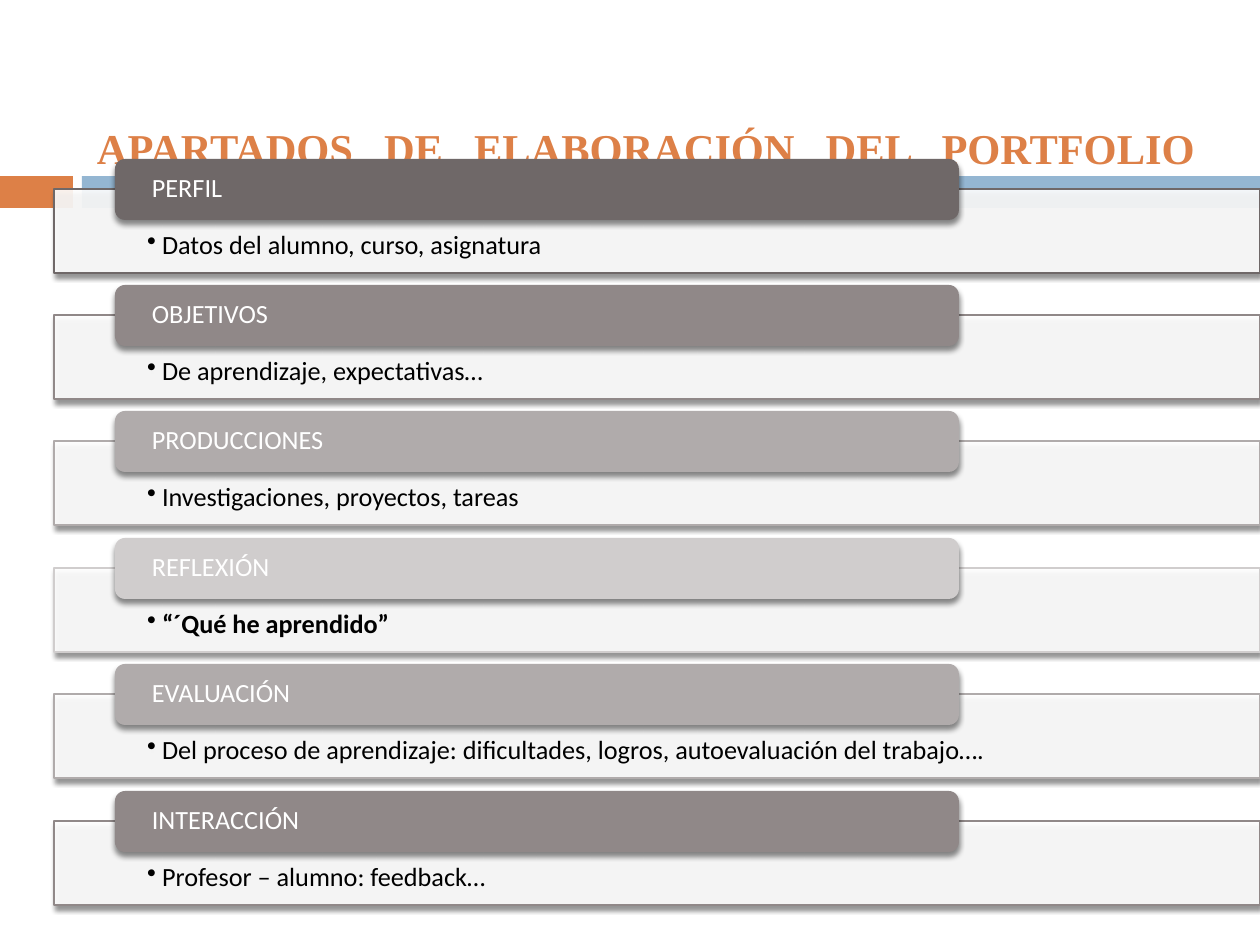
"""Build the slide that lists the sections of a portfolio."""
from lxml.etree import SubElement
from pptx import Presentation
from pptx.dml.color import RGBColor
from pptx.enum.shapes import MSO_SHAPE
from pptx.enum.text import MSO_ANCHOR, PP_ALIGN
from pptx.oxml.ns import qn
from pptx.util import Emu, Pt

SCALE = 914400 / 126
TOP, SPAN = 189, 632
ITEMS = [
    ("PERFIL", "Datos del alumno, curso, asignatura", "6F6868", False),
    ("OBJETIVOS", "De aprendizaje, expectativas…", "908888", False),
    ("PRODUCCIONES", "Investigaciones, proyectos, tareas", "B0ABAB", False),
    ("REFLEXIÓN", "“´Qué he aprendido”", "D0CDCD", True),
    ("EVALUACIÓN", "Del proceso de aprendizaje: dificultades, logros, "
     "autoevaluación del trabajo….", "B0ABAB", False),
    ("INTERACCIÓN", "Profesor – alumno: feedback…", "908888", False),
]


def px(num):
    """Turn pixels into EMU."""
    return Emu(round(num * SCALE))


def color(code):
    """Turn a hex string into a colour."""
    return RGBColor.from_string(code)


def add_box(slide, kind, box, fill, line=None):
    """Add a filled shape, outlined if a line colour is given."""
    shape = slide.shapes.add_shape(kind, *map(px, box))
    shape.shadow.inherit = False
    shape.fill.solid()
    shape.fill.fore_color.rgb = color(fill)
    if line:
        shape.line.color.rgb = color(line)
        shape.line.width = Pt(0.79)
    else:
        shape.line.fill.background()
    return shape


def add_shade(shape):
    """Cast a soft shadow straight down."""
    effects = shape._element.spPr.find(qn("a:effectLst"))
    shade = SubElement(effects, qn("a:outerShdw"), blurRad="38100",
                       dist="30000", dir="5400000", rotWithShape="0")
    tint = SubElement(shade, qn("a:srgbClr"), val="000000")
    SubElement(tint, qn("a:alpha"), val="45000")


def set_text(shape, text, size, font, code, bold, pads, anchor, align):
    """Write one formatted paragraph and return it."""
    frame = shape.text_frame
    frame.word_wrap = True
    frame.vertical_anchor = anchor
    (frame.margin_left, frame.margin_top,
     frame.margin_right, frame.margin_bottom) = map(px, pads)
    para = frame.paragraphs[0]
    para.text = text
    para.alignment = align
    for run in para.runs:
        run.font.size = Pt(size)
        run.font.name = font
        run.font.bold = bold
        run.font.color.rgb = color(code)
    return para


def add_title(slide):
    """Add the heading, with a final break that stretches its line."""
    box = slide.shapes.add_textbox(px(84), px(122), px(1124), px(52))
    set_text(box, "APARTADOS DE ELABORACIÓN DEL PORTFOLIO\v", 24.3,
             "Times New Roman", "DD8047", True, (13, 0, 13, 0),
             MSO_ANCHOR.TOP, PP_ALIGN.JUSTIFY)


def add_card(slide, top, text, code, bold):
    """Add the pale card with its bulleted text."""
    card = add_box(slide, MSO_SHAPE.RECTANGLE, (54, top, 1206, 84),
                   "FFFFFF", code)
    tint = card._element.spPr.find(qn("a:solidFill"))[0]
    SubElement(tint, qn("a:alpha"), val="90000")
    add_shade(card)
    para = set_text(card, text, 15, "Calibri", "000000", bold,
                    (93, 43, 93, 15), MSO_ANCHOR.TOP, PP_ALIGN.LEFT)
    para.line_spacing = 0.9
    props = para._p.get_or_add_pPr()
    props.set("marL", str(px(15)))
    props.set("indent", str(px(-15)))
    SubElement(props, qn("a:buChar"), char="•")


def add_tab(slide, top, text, code):
    """Add the rounded heading over a card."""
    tab = add_box(slide, MSO_SHAPE.ROUNDED_RECTANGLE,
                  (115, top, 844, 61), code)
    add_shade(tab)
    para = set_text(tab, text, 15, "Calibri", "FFFFFF", False,
                    (34, 0, 34, 0), MSO_ANCHOR.MIDDLE, PP_ALIGN.LEFT)
    para.line_spacing = 0.9


def main():
    """Build and save the slide."""
    deck = Presentation()
    deck.slide_width, deck.slide_height = px(1260), px(945)
    slide = deck.slides.add_slide(deck.slide_layouts[6])
    add_box(slide, MSO_SHAPE.RECTANGLE, (0, 176, 73, 32), "DD8047")
    add_box(slide, MSO_SHAPE.RECTANGLE, (82, 176, 1178, 32), "94B6D2")
    add_title(slide)
    for row, (head, text, code, bold) in enumerate(ITEMS):
        top = TOP + row * SPAN // (len(ITEMS) - 1)
        add_card(slide, top, text, code, bold)
        add_tab(slide, top - 30, head, code)
    deck.save("out.pptx")


if __name__ == "__main__":
    main()
